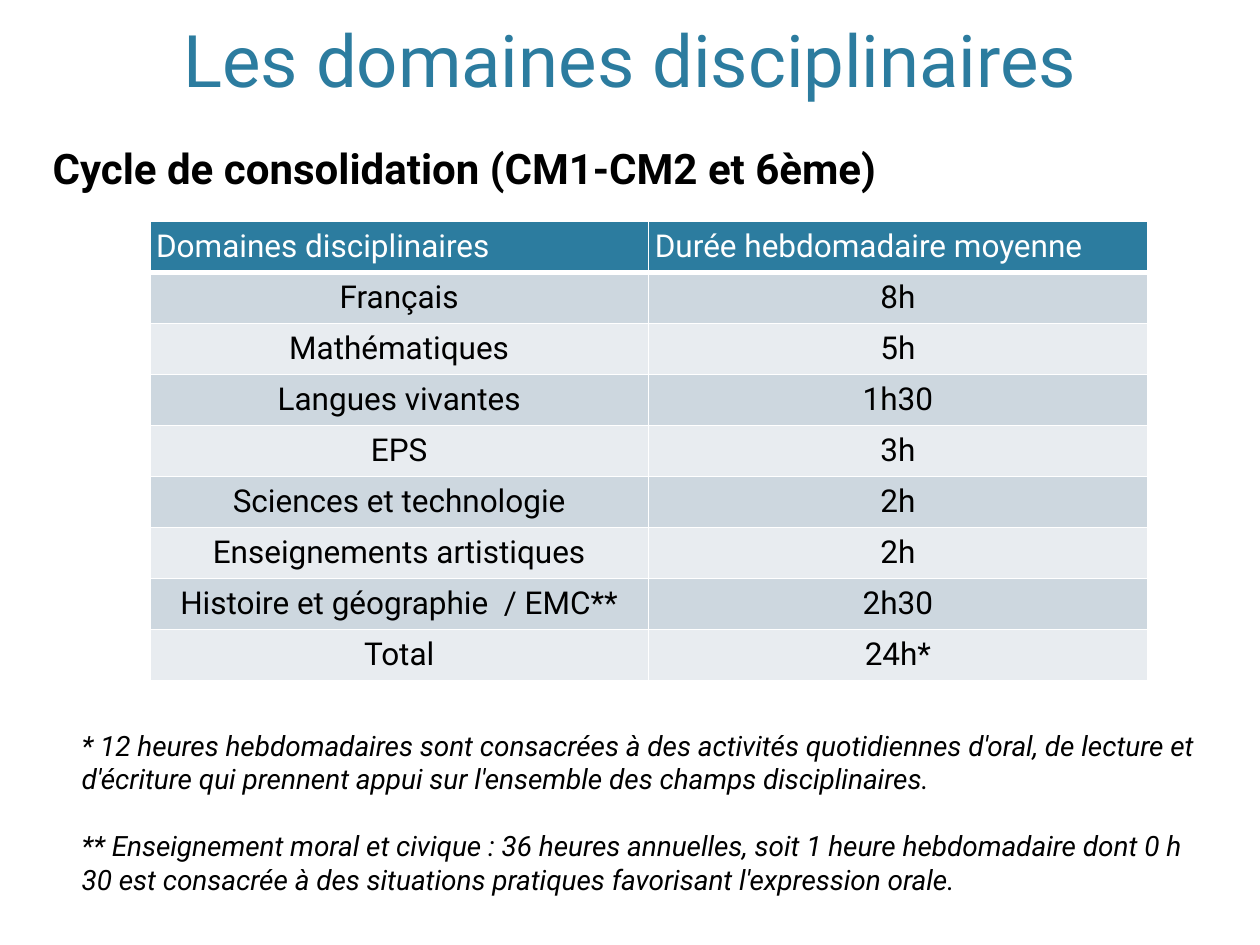
from dataclasses import dataclass

from lxml import etree
from pptx import Presentation
from pptx.dml.color import RGBColor
from pptx.enum.text import MSO_ANCHOR, PP_ALIGN
from pptx.oxml.ns import qn
from pptx.slide import Slide
from pptx.table import _Cell
from pptx.text.text import _Paragraph
from pptx.util import Pt

LEFT, CENTER = PP_ALIGN.LEFT, PP_ALIGN.CENTER
TOP, MIDDLE, BOTTOM = MSO_ANCHOR.TOP, MSO_ANCHOR.MIDDLE, MSO_ANCHOR.BOTTOM

FONT = "Roboto"
COLORS = {
    "accent": "2C7C9F",
    "text": "000000",
    "white": "FFFFFF",
    "band_dark": "CDD7DF",
    "band_light": "E8ECF0",
}
TABLE_LEFT, TABLE_TOP = 85.6, 126.7
COLUMN_WIDTH, ROW_HEIGHT = 285, 29.16
ROWS = [
    ("Domaines disciplinaires", "Durée hebdomadaire moyenne"),
    ("Français", "8h"),
    ("Mathématiques", "5h"),
    ("Langues vivantes", "1h30"),
    ("EPS", "3h"),
    ("Sciences et technologie", "2h"),
    ("Enseignements artistiques", "2h"),
    ("Histoire et géographie  / EMC**", "2h30"),
    ("Total", "24h*"),
]


@dataclass(frozen=True)
class TextStyle:
    size: float
    color: str = "text"
    bold: bool = False
    italic: bool = False
    alignment: PP_ALIGN = LEFT


@dataclass(frozen=True)
class TextBlock:
    left: float
    top: float
    width: float
    height: float
    paragraphs: tuple[str, ...]
    style: TextStyle
    anchor: MSO_ANCHOR = TOP
    gap: float = 0


TEXT_BLOCKS = [
    TextBlock(0, 0, 720, 62, ("Les domaines disciplinaires",),
              TextStyle(41.4, "accent", alignment=CENTER), BOTTOM),
    TextBlock(23, 77.8, 534, 36, ("Cycle de consolidation (CM1-CM2 et 6ème)",),
              TextStyle(24, bold=True)),
    TextBlock(39.6, 412.6, 657.4, 126, (
        "* 12 heures hebdomadaires sont consacrées à des activités quotidiennes d'oral, "
        "de lecture et d'écriture qui prennent appui sur l'ensemble des champs disciplinaires.",
        "** Enseignement moral et civique : 36 heures annuelles, soit 1 heure hebdomadaire "
        "dont 0 h 30 est consacrée à des situations pratiques favorisant l'expression orale.",
    ), TextStyle(16, italic=True), gap=19),
]
HEADER_STYLE = TextStyle(18, "white")
BODY_STYLE = TextStyle(18, alignment=CENTER)


def rgb(name: str) -> RGBColor:
    return RGBColor.from_string(COLORS[name])


def write_paragraph(paragraph: _Paragraph, text: str, style: TextStyle) -> None:
    paragraph.text = text
    paragraph.alignment = style.alignment
    for run in paragraph.runs:
        run.font.name = FONT
        run.font.size = Pt(style.size)
        run.font.bold = style.bold
        run.font.italic = style.italic
        run.font.color.rgb = rgb(style.color)


def draw_text_block(slide: Slide, block: TextBlock) -> None:
    shape = slide.shapes.add_textbox(
        Pt(block.left), Pt(block.top), Pt(block.width), Pt(block.height))
    text_frame = shape.text_frame
    text_frame.word_wrap = True
    text_frame.vertical_anchor = block.anchor
    for index, text in enumerate(block.paragraphs):
        paragraph = text_frame.add_paragraph() if index else text_frame.paragraphs[0]
        write_paragraph(paragraph, text, block.style)
        if index:
            paragraph.space_before = Pt(block.gap)


def set_borders(cell: _Cell, bottom_width: float) -> None:
    properties = cell._tc.get_or_add_tcPr()
    widths = {"a:lnL": 1, "a:lnR": 1, "a:lnT": 1, "a:lnB": bottom_width}
    for tag, width in widths.items():
        line = etree.SubElement(properties, qn(tag), w=str(Pt(width)))
        fill = etree.SubElement(line, qn("a:solidFill"))
        etree.SubElement(fill, qn("a:srgbClr"), val=COLORS["white"])


def format_cell(cell: _Cell, text: str, row_index: int) -> None:
    is_header = row_index == 0
    band = "band_dark" if row_index % 2 else "band_light"
    set_borders(cell, 3 if is_header else 1)
    cell.fill.solid()
    cell.fill.fore_color.rgb = rgb("accent" if is_header else band)
    cell.vertical_anchor = MIDDLE
    cell.margin_left = cell.margin_right = Pt(3.6)
    cell.margin_top = cell.margin_bottom = Pt(2.9 if is_header else 1.4)
    style = HEADER_STYLE if is_header else BODY_STYLE
    write_paragraph(cell.text_frame.paragraphs[0], text, style)


def draw_schedule(slide: Slide) -> None:
    column_count = len(ROWS[0])
    table = slide.shapes.add_table(
        len(ROWS), column_count, Pt(TABLE_LEFT), Pt(TABLE_TOP),
        Pt(COLUMN_WIDTH * column_count), Pt(ROW_HEIGHT * len(ROWS))).table
    for row_index, texts in enumerate(ROWS):
        table.rows[row_index].height = Pt(ROW_HEIGHT)
        for column_index, text in enumerate(texts):
            format_cell(table.cell(row_index, column_index), text, row_index)


def main() -> None:
    presentation = Presentation()
    presentation.slide_width, presentation.slide_height = Pt(720), Pt(540)
    slide = presentation.slides.add_slide(presentation.slide_layouts[6])
    slide.background.fill.solid()
    slide.background.fill.fore_color.rgb = rgb("white")
    draw_schedule(slide)
    for block in TEXT_BLOCKS:
        draw_text_block(slide, block)
    presentation.save("out.pptx")


if __name__ == "__main__":
    main()
